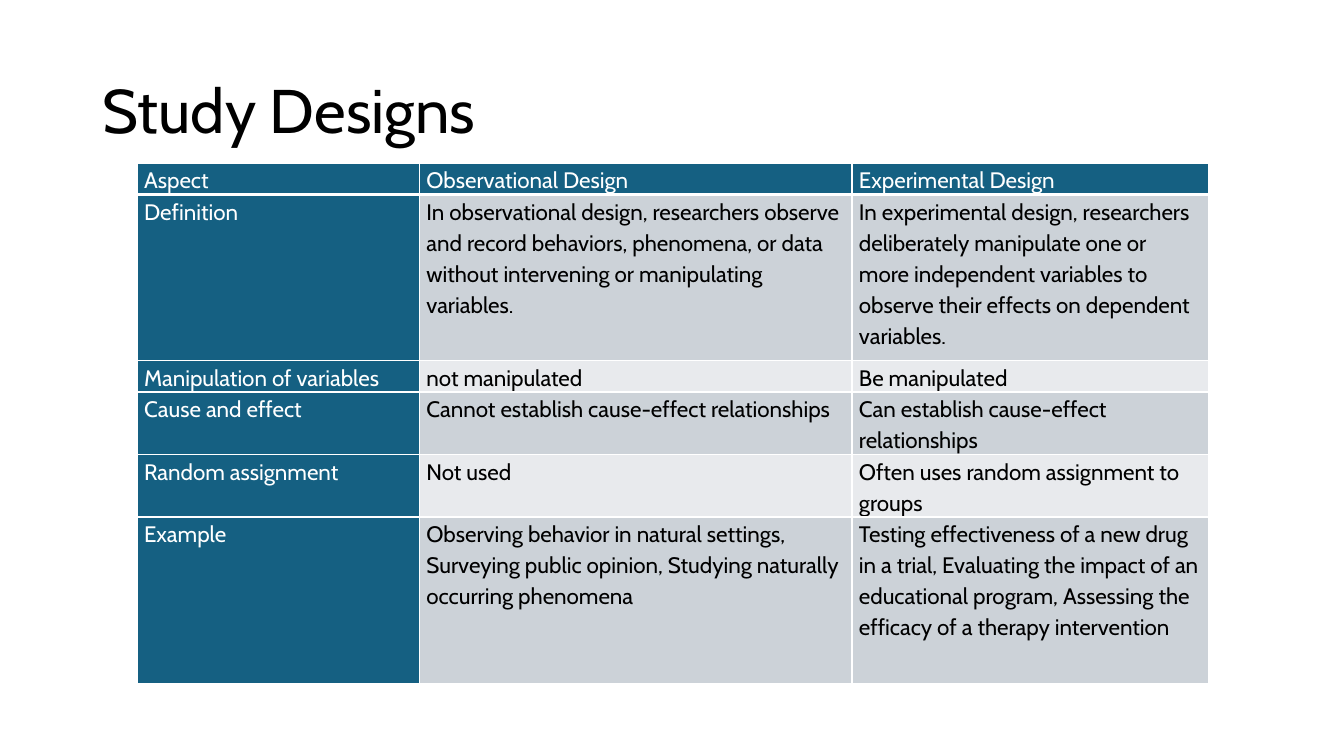
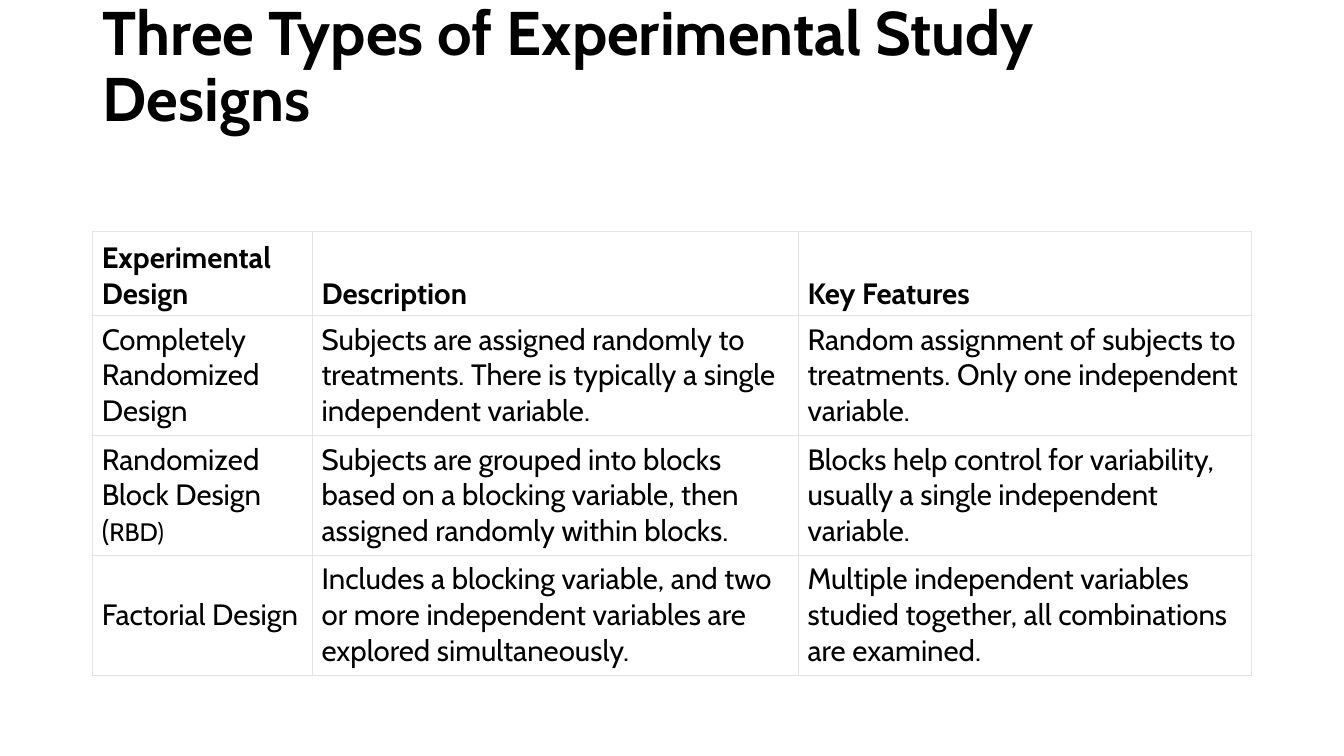
from dataclasses import dataclass
from typing import Optional

from lxml import etree
from pptx import Presentation
from pptx import util as u
from pptx.dml.color import RGBColor
from pptx.enum import text as t
from pptx.oxml import ns

EMU_PER_PX = 9144  # 100 px to the inch
FONT = "Cabin"

BLACK = RGBColor(0x00, 0x00, 0x00)
WHITE = RGBColor(0xFF, 0xFF, 0xFF)
TEAL = RGBColor(0x15, 0x60, 0x82)
BAND_DARK = RGBColor(0xCC, 0xD2, 0xD8)
BAND_LIGHT = RGBColor(0xE8, 0xEA, 0xED)
GRID_GRAY = RGBColor(0xE3, 0xE3, 0xE3)

TOP = t.MSO_ANCHOR.TOP
MIDDLE = t.MSO_ANCHOR.MIDDLE
BOTTOM = t.MSO_ANCHOR.BOTTOM


@dataclass(frozen=True)
class Run:
    text: str
    size: Optional[int] = None


CellText = str | tuple[Run, ...]


@dataclass(frozen=True)
class Title:
    text: str
    box: tuple[int, int, int, int]
    anchor: t.MSO_ANCHOR
    bold: bool = False


@dataclass(frozen=True)
class TableStyle:
    size: int
    header_fill: RGBColor
    header_color: RGBColor
    label_fill: RGBColor
    label_color: RGBColor
    bands: tuple[RGBColor, RGBColor]
    margins: tuple[int, int]
    header_anchor: t.MSO_ANCHOR
    body_anchor: t.MSO_ANCHOR
    header_bold: bool
    line_spacing: Optional[float]
    grid_color: RGBColor
    side_rule: float
    outer_rule: float
    header_rule: float
    inner_rule: float = 1


@dataclass(frozen=True)
class Table:
    left: int
    top: int
    columns: tuple[int, ...]
    rows: tuple[int, ...]
    cells: tuple[tuple[CellText, ...], ...]
    style: TableStyle


COLORED = TableStyle(
    size=16, header_fill=TEAL, header_color=WHITE, label_fill=TEAL, label_color=WHITE,
    bands=(BAND_DARK, BAND_LIGHT), margins=(7, 0), header_anchor=TOP, body_anchor=TOP,
    header_bold=False, line_spacing=1.15, grid_color=WHITE,
    side_rule=1, outer_rule=1, header_rule=3,
)
PLAIN = TableStyle(
    size=21, header_fill=WHITE, header_color=BLACK, label_fill=WHITE, label_color=BLACK,
    bands=(WHITE, WHITE), margins=(9, 4), header_anchor=BOTTOM, body_anchor=MIDDLE,
    header_bold=True, line_spacing=None, grid_color=GRID_GRAY,
    side_rule=0.5, outer_rule=0.5, header_rule=1,
)

STUDY_DESIGNS = Table(
    136, 162, (280, 429, 354), (31, 165, 31, 62, 62, 165),
    (
        ("Aspect", "Observational Design", "Experimental Design"),
        ("Definition",
         "In observational design, researchers observe and record behaviors, phenomena, "
         "or data without intervening or manipulating variables.",
         "In experimental design, researchers deliberately manipulate one or more "
         "independent variables to observe their effects on dependent variables."),
        ("Manipulation of variables", "not manipulated", "Be manipulated"),
        ("Cause and effect", "Cannot establish cause-effect relationships",
         "Can establish cause-effect relationships"),
        ("Random assignment", "Not used", "Often uses random assignment to groups"),
        ("Example",
         "Observing behavior in natural settings, Surveying public opinion, "
         "Studying naturally occurring phenomena",
         "Testing effectiveness of a new drug in a trial, Evaluating the impact of an "
         "educational program, Assessing the efficacy of a therapy intervention"),
    ),
    COLORED,
)
EXPERIMENTAL_TYPES = Table(
    92, 229, (218, 482, 449), (84, 119, 119, 119),
    (
        ("Experimental Design", "Description", "Key Features"),
        ("Completely Randomized Design",
         "Subjects are assigned randomly to treatments. There is typically a single "
         "independent variable.",
         "Random assignment of subjects to treatments. Only one independent variable."),
        ((Run("Randomized Block Design ("), Run("RBD)", 18)),
         "Subjects are grouped into blocks based on a blocking variable, then assigned "
         "randomly within blocks.",
         "Blocks help control for variability, usually a single independent variable."),
        ("Factorial Design",
         "Includes a blocking variable, and two or more independent variables are "
         "explored simultaneously.",
         "Multiple independent variables studied together, all combinations are examined."),
    ),
    PLAIN,
)

SLIDES = (
    (Title("Study Designs", (92, 40, 1150, 145), MIDDLE), STUDY_DESIGNS),
    (Title("Three Types of Experimental Study Designs", (92, 28, 1149, 111), BOTTOM, bold=True),
     EXPERIMENTAL_TYPES),
)


def px(length: int) -> u.Emu:
    return u.Emu(length * EMU_PER_PX)


def write(frame, content: CellText, *, size: int, color: RGBColor, bold: bool = False,
          line_spacing: Optional[float] = None) -> None:
    paragraph = frame.paragraphs[0]
    paragraph.alignment = t.PP_ALIGN.LEFT
    if line_spacing is not None:
        paragraph.line_spacing = line_spacing
    for part in (Run(content),) if isinstance(content, str) else content:
        run = paragraph.add_run()
        run.text = part.text
        run.font.name = FONT
        run.font.size = u.Pt(part.size or size)
        run.font.bold = bold
        run.font.color.rgb = color


def add_title(slide, title: Title) -> None:
    box = slide.shapes.add_textbox(*map(px, title.box))
    box.text_frame.word_wrap = True
    box.text_frame.vertical_anchor = title.anchor
    write(box.text_frame, title.text, size=44, color=BLACK, bold=title.bold, line_spacing=0.9)


def set_borders(cell, color: RGBColor, side: float, top: float, bottom: float) -> None:
    """Rule the four sides; call before filling, as the schema puts lines first."""
    properties = cell._tc.get_or_add_tcPr()
    for edge, width in (("L", side), ("R", side), ("T", top), ("B", bottom)):
        line = etree.SubElement(properties, ns.qn(f"a:ln{edge}"), w=str(u.Pt(width)))
        fill = etree.SubElement(line, ns.qn("a:solidFill"))
        etree.SubElement(fill, ns.qn("a:srgbClr"), val=str(color))


def format_cell(cell, content: CellText, row: int, column: int, last_row: int,
                style: TableStyle) -> None:
    is_header = row == 0
    if is_header:
        fill, color = style.header_fill, style.header_color
    elif column == 0:
        fill, color = style.label_fill, style.label_color
    else:
        fill, color = style.bands[(row - 1) % 2], BLACK

    top = style.outer_rule if is_header else style.inner_rule
    if is_header:
        bottom = style.header_rule
    else:
        bottom = style.outer_rule if row == last_row else style.inner_rule
    set_borders(cell, style.grid_color, style.side_rule, top, bottom)

    cell.fill.solid()
    cell.fill.fore_color.rgb = fill
    across, down = map(px, style.margins)
    cell.margin_left = cell.margin_right = across
    cell.margin_top = cell.margin_bottom = down
    cell.vertical_anchor = style.header_anchor if is_header else style.body_anchor
    write(cell.text_frame, content, size=style.size, color=color,
          bold=is_header and style.header_bold, line_spacing=style.line_spacing)


def add_table(slide, table: Table) -> None:
    grid = slide.shapes.add_table(
        len(table.rows), len(table.columns), px(table.left), px(table.top),
        px(sum(table.columns)), px(sum(table.rows)),
    ).table
    grid.first_row = grid.horz_banding = False
    for column, width in zip(grid.columns, table.columns):
        column.width = px(width)
    for row, height in zip(grid.rows, table.rows):
        row.height = px(height)
    for r, contents in enumerate(table.cells):
        for c, content in enumerate(contents):
            format_cell(grid.cell(r, c), content, r, c, len(table.rows) - 1, table.style)


def main() -> None:
    deck = Presentation()
    deck.slide_width, deck.slide_height = px(1333), px(750)
    blank = deck.slide_layouts[6]
    for title, table in SLIDES:
        slide = deck.slides.add_slide(blank)
        add_title(slide, title)
        add_table(slide, table)
    deck.save("out.pptx")


if __name__ == "__main__":
    main()
